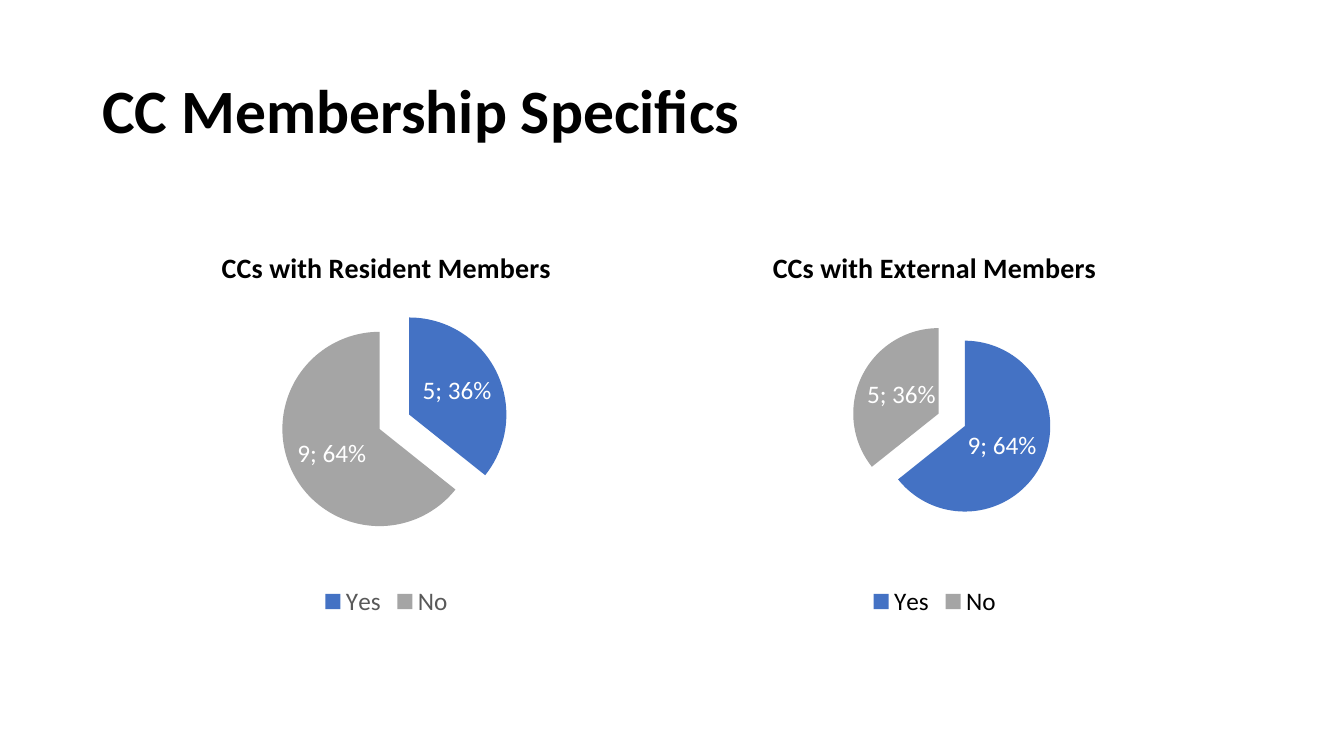
from dataclasses import dataclass

from lxml import etree
from pptx import Presentation
from pptx.chart.data import CategoryChartData
from pptx.dml.color import RGBColor
from pptx.enum.chart import XL_CHART_TYPE, XL_LABEL_POSITION, XL_LEGEND_POSITION
from pptx.enum.text import MSO_ANCHOR
from pptx.oxml import parse_xml
from pptx.oxml.ns import nsdecls, qn
from pptx.slide import Slide
from pptx.text.text import Font
from pptx.util import Cm, Pt

PIE = XL_CHART_TYPE.PIE
INSIDE_END = XL_LABEL_POSITION.INSIDE_END
BOTTOM = XL_LEGEND_POSITION.BOTTOM
MIDDLE = MSO_ANCHOR.MIDDLE

FONT = "Calibri"
BLACK, WHITE, GREY = "000000", "FFFFFF", "595959"
ANSWERS = {"Yes": "4472C4", "No": "A5A5A5"}
CHART_TOP, CHART_HEIGHT = 5.79, 9.88


@dataclass(frozen=True)
class MemberPie:
    title: str
    left: float
    width: float
    values: tuple[int, int]
    legend_color: str
    explosion: int
    plot: tuple[float, float, float, float]  # x, y, w, h as shares of the chart


PIES = [
    MemberPie("CCs with Resident Members", 3.07, 13.34, (5, 9), GREY, 17,
              (0.3, 0.2, 0.43, 0.58)),
    MemberPie("CCs with External Members", 17.37, 12.37, (9, 5), BLACK, 17,
              (0.33, 0.23, 0.41, 0.51)),
]


def rgb(color: str) -> RGBColor:
    return RGBColor.from_string(color)


def style_font(font: Font, size: int, color: str, bold: bool = False) -> None:
    font.name = FONT
    font.size = Pt(size)
    font.bold = bold
    font.color.rgb = rgb(color)


def add_title(page: Slide, text: str) -> None:
    box = page.shapes.add_textbox(Cm(2.33), Cm(1.01), Cm(29.21), Cm(3.68))
    frame = box.text_frame
    frame.word_wrap = True
    frame.vertical_anchor = MIDDLE
    frame.text = text
    para = frame.paragraphs[0]
    para.line_spacing = 0.9
    style_font(para.runs[0].font, 44, BLACK, bold=True)


def add_pie(page: Slide, pie: MemberPie) -> None:
    data = CategoryChartData()
    data.categories = list(ANSWERS)
    data.add_series("Series 1", pie.values)
    chart = page.shapes.add_chart(PIE, Cm(pie.left), Cm(CHART_TOP), Cm(pie.width),
                                  Cm(CHART_HEIGHT), data).chart
    style_font(chart.font, 10, BLACK)

    # Title and legend
    chart.has_title = True
    title_frame = chart.chart_title.text_frame
    title_frame.text = pie.title
    style_font(title_frame.paragraphs[0].runs[0].font, 20, BLACK, bold=True)
    chart.chart_title.include_in_layout = False
    chart.has_legend = True
    chart.legend.position = BOTTOM
    chart.legend.include_in_layout = False
    style_font(chart.legend.font, 18, pie.legend_color)

    # Slices
    plot = chart.plots[0]
    plot.vary_by_categories = True
    series = plot.series[0]
    for index, color in enumerate(ANSWERS.values()):
        fill = series.points[index].format.fill
        fill.solid()
        fill.fore_color.rgb = rgb(color)

    # Labels
    labels = series.data_labels
    labels.show_value = True
    labels.show_percentage = True
    labels.position = INSIDE_END
    style_font(labels.font, 18, WHITE)
    separator = etree.Element(qn("c:separator"))
    separator.text = "; "
    labels_xml = series._element.find(qn("c:dLbls"))
    labels_xml.find(qn("c:showBubbleSize")).addnext(separator)

    # Gap between the slices
    explosion = parse_xml(f'<c:explosion {nsdecls("c")} val="{pie.explosion}"/>')
    series._element.find(qn("c:dPt")).addprevious(explosion)

    # Plot placement
    area = chart._chartSpace.chart.plotArea
    for old_layout in area.findall(qn("c:layout")):
        area.remove(old_layout)
    shares = "".join(f'<c:{name} val="{share}"/>'
                     for name, share in zip("xywh", pie.plot))
    area.insert(0, parse_xml(
        f'<c:layout {nsdecls("c")}><c:manualLayout><c:layoutTarget val="inner"/>'
        f'<c:xMode val="edge"/><c:yMode val="edge"/>{shares}'
        f'</c:manualLayout></c:layout>'))


def main() -> None:
    deck = Presentation()
    deck.slide_width, deck.slide_height = Cm(33.87), Cm(19.05)
    page = deck.slides.add_slide(deck.slide_layouts[6])
    for pie in PIES:
        add_pie(page, pie)
    add_title(page, "CC Membership Specifics")
    deck.save("out.pptx")


if __name__ == "__main__":
    main()
